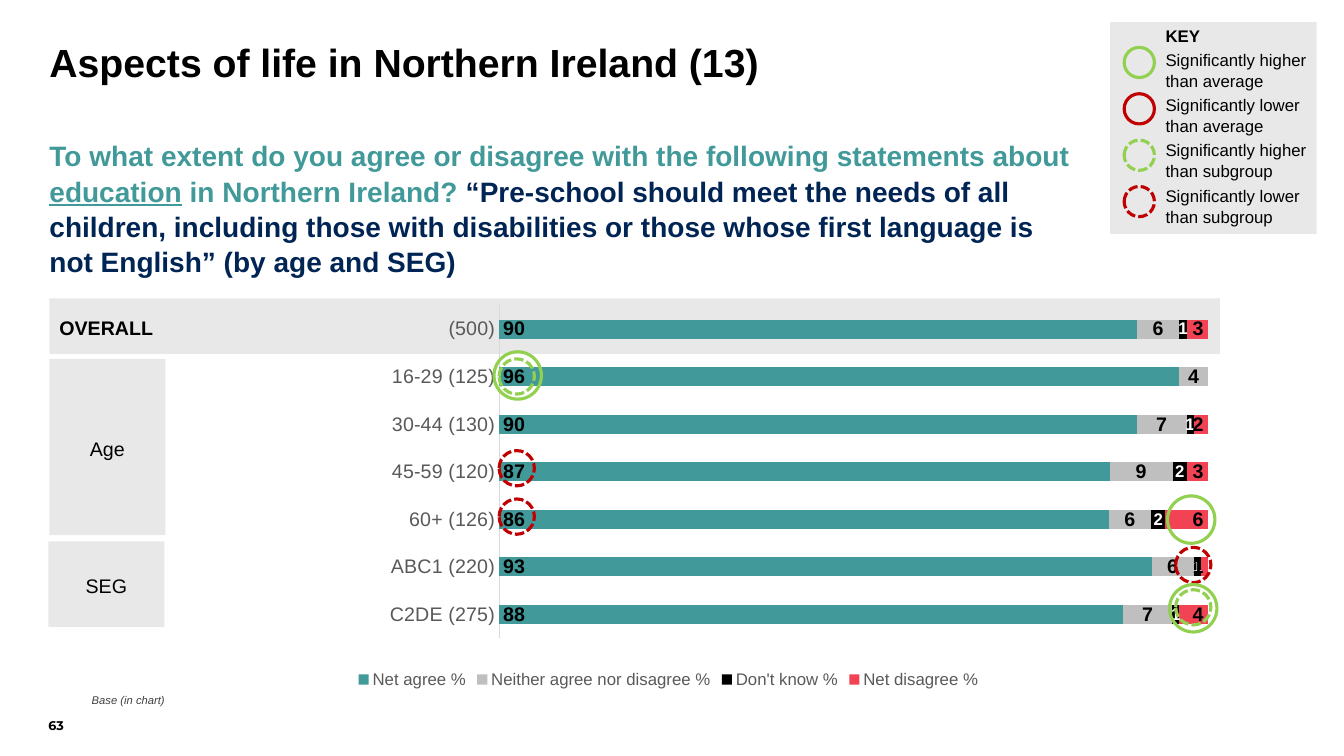
from pptx import Presentation
from pptx import util as u
from pptx.chart.data import CategoryChartData
from pptx.dml.color import RGBColor
from pptx.enum import chart as ch, dml, shapes, text
from lxml import etree

PX = 9144
C = dict(agree="419999", neither="BFBFBF", black="000000", disagree="F14354",
         navy="002554", panel="E8E8E8", grey="595959", axis="D9D9D9",
         base="404040", white="FFFFFF", high="92D050", low="C00000")
C_NS = "http://schemas.openxmlformats.org/drawingml/2006/chart"


def rgb(name):
    """Return a palette colour."""
    return RGBColor.from_string(C[name])


def emu(*px):
    """Turn px lengths into EMU."""
    return [u.Emu(v * PX) for v in px]


def set_font(font, color="black", **fmt):
    """Set font attributes from format values."""
    for k, v in {"name": "Arial", **fmt}.items():
        setattr(font, k, u.Pt(v) if k == "size" else v)
    font.color.rgb = rgb(color)


def write(sp, runs, spacing=1.05, align=text.PP_ALIGN.LEFT, **fmt):
    """Fill a shape with one paragraph of (text, format) runs."""
    p = sp.text_frame.paragraphs[0]
    p.line_spacing, p.alignment = spacing, align
    for words, own in runs:
        r = p.add_run()
        r.text = words
        set_font(r.font, **{**fmt, **own})


def label(parent, box, runs, anchor=text.MSO_ANCHOR.TOP, wrap=True, **fmt):
    """Add a text box without margins."""
    sp = parent.add_textbox(*emu(*box))
    tf = sp.text_frame
    for k in ("margin_left", "margin_top", "margin_right", "margin_bottom"):
        setattr(tf, k, 0)
    tf.word_wrap, tf.vertical_anchor = wrap, anchor
    write(sp, runs, **fmt)


def panel(parent, box):
    """Add a plain grey rectangle."""
    sp = parent.add_shape(shapes.MSO_SHAPE.RECTANGLE, *emu(*box))
    sp.shadow.inherit = False
    sp.fill.solid()
    sp.fill.fore_color.rgb = rgb("panel")
    sp.line.fill.background()
    return sp


def ring(parent, x, y, size, color, dashed):
    """Add a significance ring."""
    sp = parent.add_shape(shapes.MSO_SHAPE.OVAL, *emu(x, y, size, size))
    sp.shadow.inherit = False
    sp.fill.background()
    sp.line.color.rgb, sp.line.width = rgb(color), u.Pt(2.25)
    if dashed:
        sp.line.dash_style = dml.MSO_LINE.SQUARE_DOT


def heading(s, x, y, w):
    """Add the title and the survey question."""
    label(s.shapes, (x, y, w, 85), [("Aspects of life in Northern Ireland (13)", {})],
          spacing=0.9, size=28, bold=True)
    label(s.shapes, (x, y + 93, w, 135), [
        ("To what extent do you agree or disagree with the following statements about ", {}),
        ("education", {"underline": True}),
        (" in Northern Ireland? ", {}),
        ("“Pre-school should meet the needs of all children, including those with "
         "disabilities or those whose first language is not English” (by age and SEG)",
         {"color": "navy"})], size=20, bold=True, color="agree")


def key(s, x, y, w, h):
    """Add the key to the rings."""
    g = s.shapes.add_group_shape().shapes
    panel(g, (x, y, w, h))
    label(g, (x + 55, y + 3, 45, 20), [("KEY", {})], size=12, bold=True)
    entries = [(level, scope) for scope in ("average", "subgroup")
               for level in ("higher", "lower")]
    for i, (level, scope) in enumerate(entries):
        ring(g, x + 14, y + 25 + 46 * i, 30,
             "high" if level == "higher" else "low", scope == "subgroup")
        label(g, (x + 55, y + 26 + 45 * i, 141, 40),
              [(f"Significantly {level} than {scope}", {})], size=12)


def row_groups(s, x, y):
    """Add the grey panels that group the chart rows."""
    mid = text.PP_ALIGN.CENTER
    for name, dx, dy, w, h, align in (("OVERALL", 0, 0, 1161, 55, text.PP_ALIGN.LEFT),
                                      ("Age", 0, 60, 115, 175, mid),
                                      ("SEG", -1, 241, 115, 85, mid)):
        sp = panel(s.shapes, (x + dx, y + dy, w, h))
        sp.text_frame.vertical_anchor = text.MSO_ANCHOR.MIDDLE
        write(sp, [(name, {})], spacing=1.1, align=align, size=14, bold=name == "OVERALL")


def set_plot_area(chart, **fractions):
    """Fix the inner plot area as fractions of the chart."""
    area = chart._chartSpace.chart.plotArea
    for old in area.findall(f"{{{C_NS}}}layout"):
        area.remove(old)
    layout = etree.Element(f"{{{C_NS}}}layout")
    manual = etree.SubElement(layout, f"{{{C_NS}}}manualLayout")
    values = dict(layoutTarget="inner", xMode="edge", yMode="edge", **fractions)
    for tag, v in values.items():
        etree.SubElement(manual, f"{{{C_NS}}}{tag}").set("val", str(v))
    area.insert(0, layout)


def agreement_chart(s, x, y, w, h):
    """Add the stacked bars and the rings on them."""
    pos = ch.XL_LABEL_POSITION
    series = (
        ("Net agree %", (88, 93, 86, 87, 90, 96, 90), "agree", "black", 14, pos.INSIDE_BASE),
        ("Neither agree nor disagree %", (7, 6, 6, 9, 7, 4, 6), "neither", "black", 14, None),
        ("Don't know %", (1, 1, 2, 2, 1, None, 1), "black", "white", 12, None),
        ("Net disagree %", (4, 1, 6, 3, 2, None, 3), "disagree", "black", 14, pos.INSIDE_END))
    data = CategoryChartData(number_format="0")
    data.categories = ["C2DE (275)", "ABC1 (220)", "60+ (126)", "45-59 (120)",
                       "30-44 (130)", "16-29 (125)", "(500)"]
    for name, values, *_ in series:
        data.add_series(name, values)
    chart = s.shapes.add_chart(ch.XL_CHART_TYPE.BAR_STACKED_100, *emu(x, y, w, h), data).chart
    set_font(chart.font, size=10)
    chart.has_title = False
    chart.has_legend = True
    chart.legend.position = ch.XL_LEGEND_POSITION.BOTTOM
    chart.legend.include_in_layout = False
    set_font(chart.legend.font, "grey", size=12)
    cat, val = chart.category_axis, chart.value_axis
    cat.major_tick_mark = cat.minor_tick_mark = ch.XL_TICK_MARK.NONE
    set_font(cat.tick_labels.font, "grey", size=14)
    cat.format.line.color.rgb, cat.format.line.width = rgb("axis"), u.Pt(0.75)
    val.visible = val.has_major_gridlines = False
    plot = chart.plots[0]
    plot.gap_width, plot.overlap, plot.vary_by_categories = 150, 100, False
    for ser, (_, _, fill, color, size, place) in zip(plot.series, series):
        ser.format.fill.solid()
        ser.format.fill.fore_color.rgb = rgb(fill)
        dl = ser.data_labels
        dl.show_value, dl.number_format, dl.number_format_is_linked = True, "0", False
        set_font(dl.font, color, size=size, bold=True)
        if place is not None:
            dl.position = place
    set_plot_area(chart, x=0.343, y=0.04, w=0.657, h=0.826)
    for dx, dy, size, color, dashed in (
            (362, 62, 47, "high", False), (367, 69, 35, "high", True),
            (367, 160, 35, "low", True), (367, 208, 35, "low", True),
            (1030, 205, 47, "high", False), (1038, 256, 35, "low", True),
            (1038, 298, 35, "high", True), (1032, 293, 47, "high", False)):
        ring(s.shapes, x + dx, y + dy, size, color, dashed)


def footer(s, x, y):
    """Add the base note and the page number."""
    low = text.MSO_ANCHOR.BOTTOM
    label(s.shapes, (x + 43, y, 1233, 14), [("Base (in chart)", {})], anchor=low,
          spacing=1.1, size=8, italic=True, color="base")
    label(s.shapes, (x, y, 33, 40), [("63", {})], anchor=low, wrap=False,
          spacing=1.0, size=9, bold=True, name="Montserrat")


def main():
    """Build and save the slide."""
    prs = Presentation()
    prs.slide_width, prs.slide_height = emu(1333, 750)
    s = prs.slides.add_slide(prs.slide_layouts[6])
    heading(s, 49, 43, 1022)
    key(s, 1101, 22, 205, 210)
    row_groups(s, 49, 296)
    agreement_chart(s, 128, 287, 1070, 400)
    footer(s, 48, 687)
    prs.save("out.pptx")


if __name__ == "__main__":
    main()
